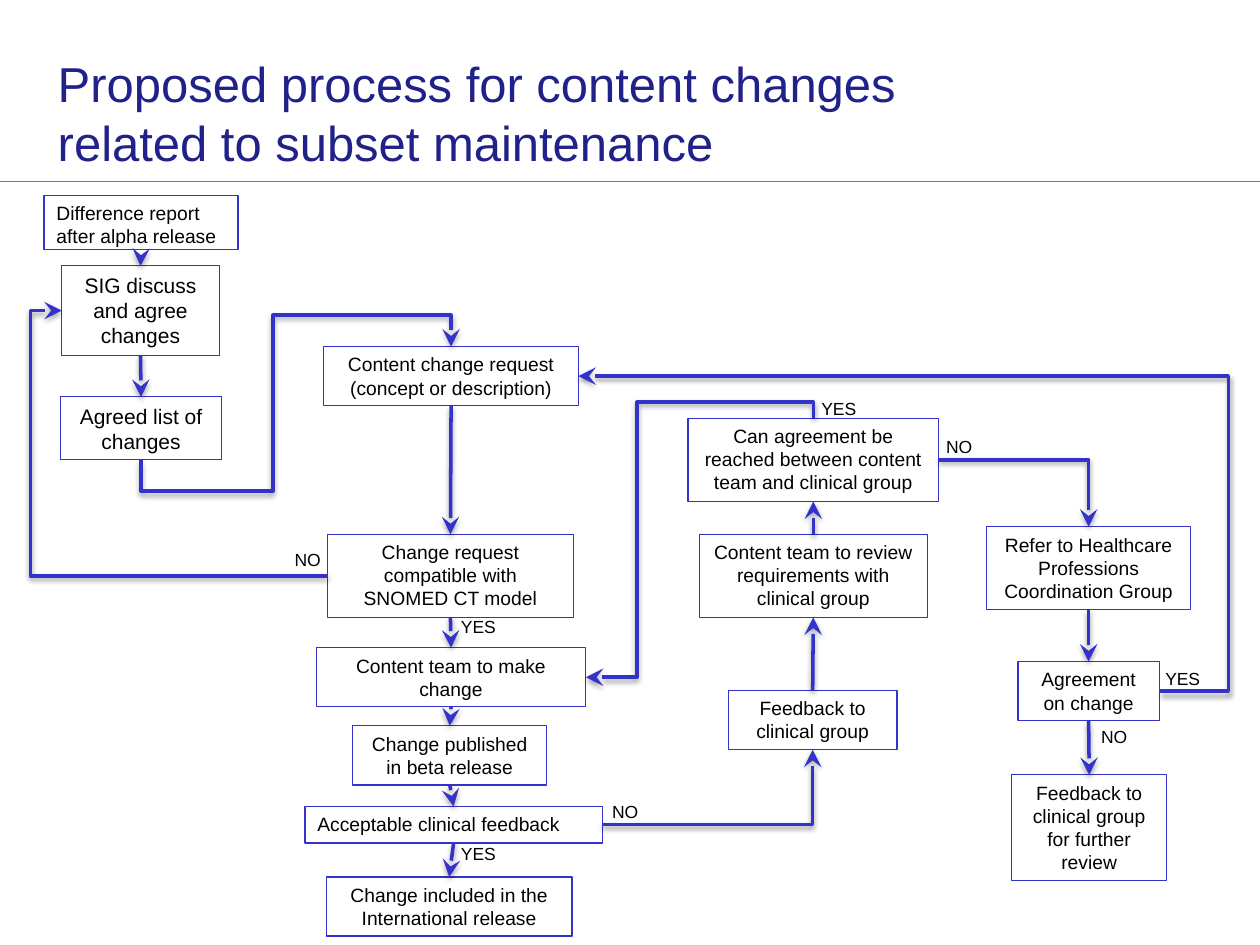
from math import cos, radians, sin

from lxml.etree import SubElement
from pptx import Presentation
from pptx.dml.color import RGBColor
from pptx.enum.shapes import MSO_CONNECTOR, MSO_SHAPE
from pptx.enum.text import MSO_ANCHOR, PP_ALIGN
from pptx.oxml import parse_xml
from pptx.oxml.ns import nsdecls, qn
from pptx.util import Inches, Pt

BLUE = RGBColor(0x33, 0x33, 0xCC)
NAVY = RGBColor(0x21, 0x21, 0x8A)
TEAL = RGBColor(0x22, 0x9B, 0xB8)
BLACK = RGBColor(0x00, 0x00, 0x00)
FONT = "Arial"
TOP, LEFT, BOTTOM, RIGHT = range(4)
SHADOW = (
    f'<a:effectLst {nsdecls("a")}><a:outerShdw blurRad="40000" dist="20000" dir="5400000" '
    'rotWithShape="0"><a:srgbClr val="000000"><a:alpha val="38000"/></a:srgbClr>'
    "</a:outerShdw></a:effectLst>"
)


class FlowchartSlide:
    """Draws the elements of a flowchart in one style on one slide."""

    def __init__(self, slide):
        self.shapes = slide.shapes

    def set_text(self, shape, text, size, color=BLACK, align=PP_ALIGN.LEFT, anchor=MSO_ANCHOR.TOP):
        text_frame = shape.text_frame
        text_frame.text = text
        text_frame.word_wrap = True
        text_frame.vertical_anchor = anchor
        paragraph = text_frame.paragraphs[0]
        paragraph.alignment = align
        font = paragraph.runs[0].font
        font.name, font.size, font.color.rgb = FONT, Pt(size), color

    def title(self, text, left, top, width, height):
        shape = self.shapes.add_textbox(*map(Inches, (left, top, width, height)))
        self.set_text(shape, text, 28, NAVY, anchor=MSO_ANCHOR.MIDDLE)

    def label(self, text, left, top):
        width = 0.5 if text == "YES" else 0.42
        shape = self.shapes.add_textbox(*map(Inches, (left, top, width, 0.28)))
        self.set_text(shape, text, 10)

    def box(self, text, left, top, width, height, size=11, align=PP_ALIGN.CENTER):
        shape = self.shapes.add_shape(
            MSO_SHAPE.RECTANGLE, *map(Inches, (left, top, width, height))
        )
        shape.shadow.inherit = False
        shape.fill.background()
        shape.line.color.rgb = BLUE
        shape.line.width = Pt(0.75)
        self.set_text(shape, text, size, align=align)
        return shape

    def rule(self, top):
        line = self.shapes.add_connector(
            MSO_CONNECTOR.STRAIGHT, 0, Inches(top), Inches(10), Inches(top)
        )
        line.line.color.rgb = TEAL
        line.line.width = Pt(0.75)
        SubElement(line.element.spPr, qn("a:effectLst"))

    def arrow(self, start, end, start_side=BOTTOM, end_side=TOP, kind=MSO_CONNECTOR.STRAIGHT):
        connector = self.shapes.add_connector(kind, 0, 0, 0, 0)
        connector.begin_connect(start, start_side)
        connector.end_connect(end, end_side)
        connector.line.color.rgb = BLUE
        connector.line.width = Pt(2)
        properties = connector.element.spPr
        outline = properties.find(qn("a:ln"))
        SubElement(outline, qn("a:tailEnd"), type="stealth", w="lg", len="lg")
        properties.append(parse_xml(SHADOW))
        return connector

    def elbow(self, start, start_side, end, end_side, segments, rotation, adjustments=()):
        connector = self.arrow(start, end, start_side, end_side, MSO_CONNECTOR.ELBOW)
        across = connector.end_x - connector.begin_x
        down = connector.end_y - connector.begin_y
        center_x = connector.begin_x + across / 2
        center_y = connector.begin_y + down / 2
        angle = radians(rotation)
        local_x = round(across * cos(angle) + down * sin(angle))
        local_y = round(down * cos(angle) - across * sin(angle))
        connector.width, connector.height = abs(local_x), abs(local_y)
        connector.left = round(center_x - connector.width / 2)
        connector.top = round(center_y - connector.height / 2)
        transform = connector.element.spPr.get_or_add_xfrm()
        transform.set("rot", str(rotation * 60000))
        transform.flipH, transform.flipV = local_x < 0, local_y < 0
        geometry = connector.element.spPr.find(qn("a:prstGeom"))
        geometry.set("prst", f"bentConnector{segments}")
        guides = geometry.find(qn("a:avLst"))
        for number, value in enumerate(adjustments, 1):
            SubElement(
                guides, qn("a:gd"), name=f"adj{number}", fmla=f"val {round(value * 100000)}"
            )


def main():
    presentation = Presentation()
    presentation.slide_width, presentation.slide_height = Inches(10), Inches(7.5)
    chart = FlowchartSlide(presentation.slides.add_slide(presentation.slide_layouts[6]))

    chart.rule(1.44)
    chart.title(
        "Proposed process for content changes related to subset maintenance",
        0.36, 0.61, 7.21, 0.56,
    )

    report = chart.box(
        "Difference report after alpha release", 0.35, 1.55, 1.54, 0.43, align=PP_ALIGN.LEFT
    )
    discuss = chart.box("SIG discuss and agree changes", 0.49, 2.11, 1.25, 0.71, size=12)
    agreed = chart.box("Agreed list of changes", 0.48, 3.15, 1.28, 0.5, size=12)

    request = chart.box(
        "Content change request (concept or description)", 2.57, 2.75, 2.02, 0.47
    )
    compatible = chart.box(
        "Change request compatible with SNOMED CT model", 2.6, 4.24, 1.95, 0.66
    )
    change = chart.box("Content team to make change", 2.51, 5.14, 2.14, 0.47)
    published = chart.box("Change published in beta release", 2.8, 5.76, 1.54, 0.47)
    acceptable = chart.box(
        "Acceptable clinical feedback", 2.42, 6.4, 2.36, 0.29, align=PP_ALIGN.LEFT
    )
    included = chart.box(
        "Change included in the International release", 2.59, 6.96, 1.95, 0.47
    )

    feedback = chart.box("Feedback to clinical group", 5.78, 5.48, 1.34, 0.47)
    review = chart.box(
        "Content team to review requirements with clinical group", 5.55, 4.24, 1.81, 0.66
    )
    agreement = chart.box(
        "Can agreement be reached between content team and clinical group",
        5.46, 3.32, 1.99, 0.66,
    )

    refer = chart.box(
        "Refer to Healthcare Professions Coordination Group", 7.83, 4.18, 1.62, 0.66
    )
    decision = chart.box("Agreement on change", 8.08, 5.25, 1.12, 0.47)
    further = chart.box(
        "Feedback to clinical group for further review", 8.03, 6.15, 1.23, 0.84
    )

    downward = (
        (report, discuss, agreed),
        (request, compatible, change, published, acceptable, included),
        (refer, decision, further),
    )
    for column in downward:
        for start, end in zip(column, column[1:]):
            chart.arrow(start, end)
    for start, end in ((feedback, review), (review, agreement)):
        chart.arrow(start, end, TOP, BOTTOM)

    chart.elbow(agreed, BOTTOM, request, TOP, 5, 270, (-0.276, 0.425, 1.276))
    chart.elbow(compatible, LEFT, discuss, LEFT, 3, 180, (1.118,))
    chart.elbow(acceptable, RIGHT, feedback, BOTTOM, 2, 180)
    chart.elbow(agreement, TOP, change, RIGHT, 4, 90, (-0.062, 0.776))
    chart.elbow(agreement, RIGHT, refer, TOP, 2, 0)
    chart.elbow(decision, RIGHT, request, RIGHT, 3, 180, (-0.119,))

    yes_places = ((9.15, 5.25), (3.56, 4.84), (3.56, 6.64), (6.42, 3.11))
    no_places = ((8.64, 5.71), (4.76, 6.31), (7.41, 3.41), (2.24, 4.31))
    for text, places in (("YES", yes_places), ("NO", no_places)):
        for left, top in places:
            chart.label(text, left, top)

    presentation.save("out.pptx")


if __name__ == "__main__":
    main()
